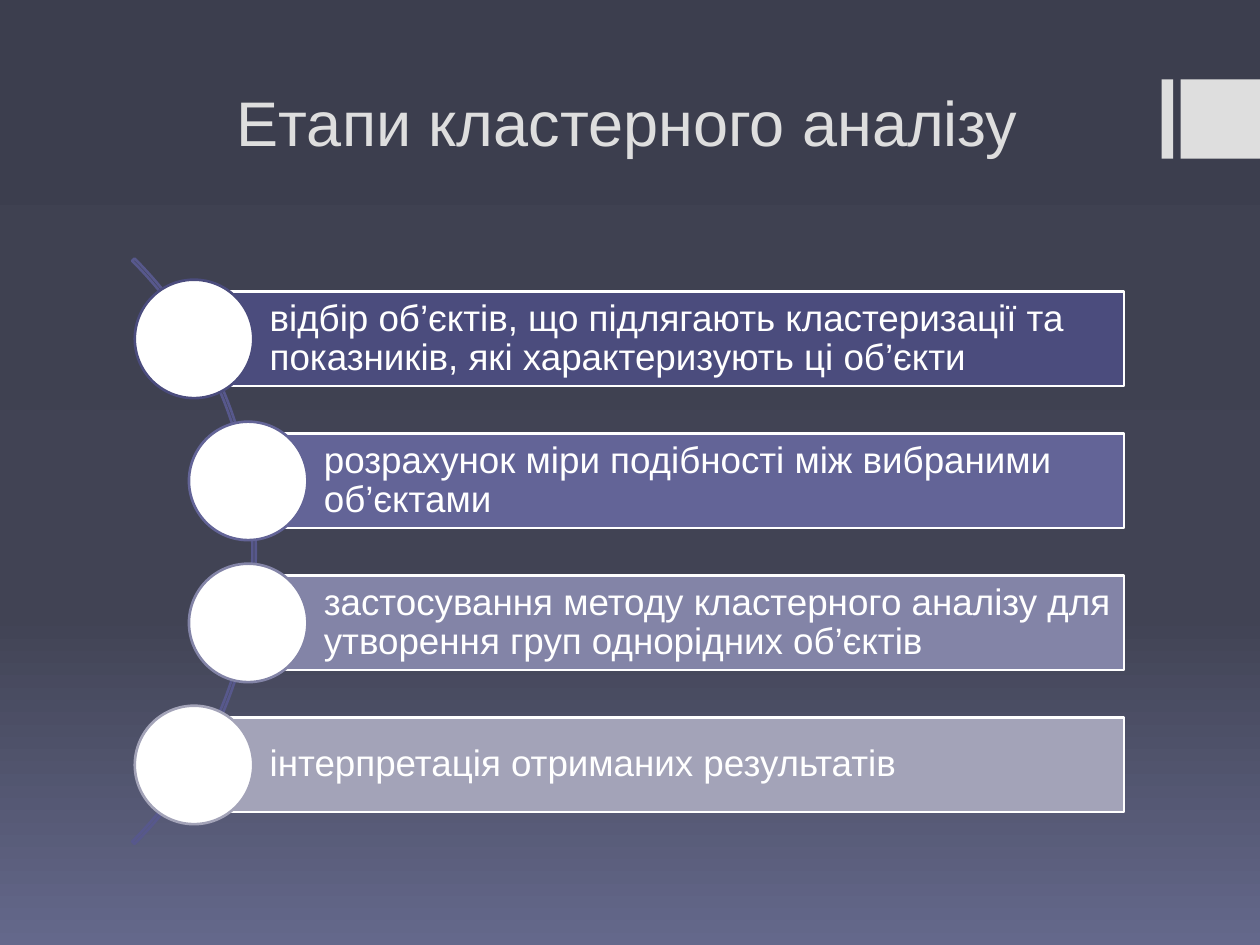
from copy import deepcopy

from pptx import Presentation
from pptx.dml.color import RGBColor
from pptx.enum.shapes import MSO_SHAPE as SHAPE
from pptx.enum.text import MSO_ANCHOR as ANCHOR, PP_ALIGN as ALIGN
from pptx.oxml.ns import qn
from pptx.util import Inches, Pt

WHITE = RGBColor(0xFF, 0xFF, 0xFF)
LIGHT = RGBColor(0xDE, 0xDE, 0xDE)
ARC = RGBColor(0x57, 0x58, 0x8C)
BACKGROUND = [
    (0, RGBColor(0x3C, 0x3E, 0x4E)),
    (0.65, RGBColor(0x41, 0x43, 0x54)),
    (1, RGBColor(0x64, 0x68, 0x8B)),
]

# Circle centre x, colour, text
STAGES = [
    (1.54, RGBColor(0x4B, 0x4C, 0x7D),
     "відбір об’єктів, що підлягають кластеризації та показників, які характеризують ці об’єкти"),
    (1.97, RGBColor(0x63, 0x64, 0x97),
     "розрахунок міри подібності між вибраними об’єктами"),
    (1.97, RGBColor(0x83, 0x84, 0xA7),
     "застосування методу кластерного аналізу для утворення груп однорідних об’єктів"),
    (1.54, RGBColor(0xA3, 0xA3, 0xB8),
     "інтерпретація отриманих результатів"),
]
FIRST_Y, PITCH = 2.69, 1.127
BAR_RIGHT, BAR_HEIGHT, CIRCLE = 8.92, 0.75, 0.94


def write(tf, text, size, color, align=ALIGN.LEFT, anchor=ANCHOR.MIDDLE,
          insets=(0.1, 0.05, 0.1, 0.05), spacing=None):
    tf.word_wrap = True
    tf.vertical_anchor = anchor
    tf.margin_left, tf.margin_top, tf.margin_right, tf.margin_bottom = map(Inches, insets)
    p = tf.paragraphs[0]
    p.alignment = align
    p.line_spacing = spacing
    r = p.add_run()
    r.text = text
    r.font.name = "Arial"
    r.font.size = Pt(size)
    r.font.color.rgb = color


class Deck:
    def __init__(self, prs):
        self.line_width = Pt(1.5)
        self.slide = prs.slides.add_slide(prs.slide_layouts[5])

    def background(self, stops):
        fill = self.slide.background.fill
        fill.gradient()
        fill.gradient_angle = 270
        gs_list = self.slide.element.find(".//" + qn("a:gsLst"))
        while len(gs_list) < len(stops):
            gs_list.append(deepcopy(gs_list[0]))
        for stop, (position, color) in zip(fill.gradient_stops, stops):
            stop.position = position
            stop.color.rgb = color

    def title(self, text, box):
        sp = self.slide.shapes.title
        sp.left, sp.top, sp.width, sp.height = map(Inches, box)
        write(sp.text_frame, text, 36, LIGHT, align=ALIGN.CENTER, anchor=ANCHOR.BOTTOM)

    def shape(self, kind, box, fill=None, line=None):
        sp = self.slide.shapes.add_shape(kind, *map(Inches, box))
        sp.shadow.inherit = False
        if fill is None:
            sp.fill.background()
        else:
            sp.fill.solid()
            sp.fill.fore_color.rgb = fill
        if line is None:
            sp.line.fill.background()
        else:
            sp.line.color.rgb = line
            sp.line.width = self.line_width
        return sp

    def arc(self, box, start, end, thickness):
        sp = self.shape(SHAPE.BLOCK_ARC, box, line=ARC)
        for i, value in enumerate((start, end, thickness)):
            sp.adjustments[i] = value

    def stage(self, x, y, color, text):
        """Draw a text bar with a circle over its left end, centred on (x, y)."""
        bar = self.shape(SHAPE.RECTANGLE, (x, y - BAR_HEIGHT / 2, BAR_RIGHT - x, BAR_HEIGHT),
                         fill=color, line=WHITE)
        write(bar.text_frame, text, 21, WHITE, insets=(0.6, 0.06, 0.06, 0.06), spacing=0.9)
        self.shape(SHAPE.OVAL, (x - CIRCLE / 2, y - CIRCLE / 2, CIRCLE, CIRCLE),
                   fill=WHITE, line=color)


def main():
    prs = Presentation()
    prs.slide_width, prs.slide_height = Inches(10), Inches(7.5)
    deck = Deck(prs)
    deck.background(BACKGROUND)
    for left, width in ((9.22, 0.09), (9.37, 0.63)):
        deck.shape(SHAPE.RECTANGLE, (left, 0.63, width, 0.63), fill=LIGHT)
    deck.title("Етапи кластерного аналізу", (0.98, 0.6, 8, 0.71))
    deck.arc((-4.54, 1.09, 6.57, 6.57), 189, 27, 0.004)
    for i, (x, color, text) in enumerate(STAGES):
        deck.stage(x, FIRST_Y + i * PITCH, color, text)
    prs.save("out.pptx")


if __name__ == "__main__":
    main()
